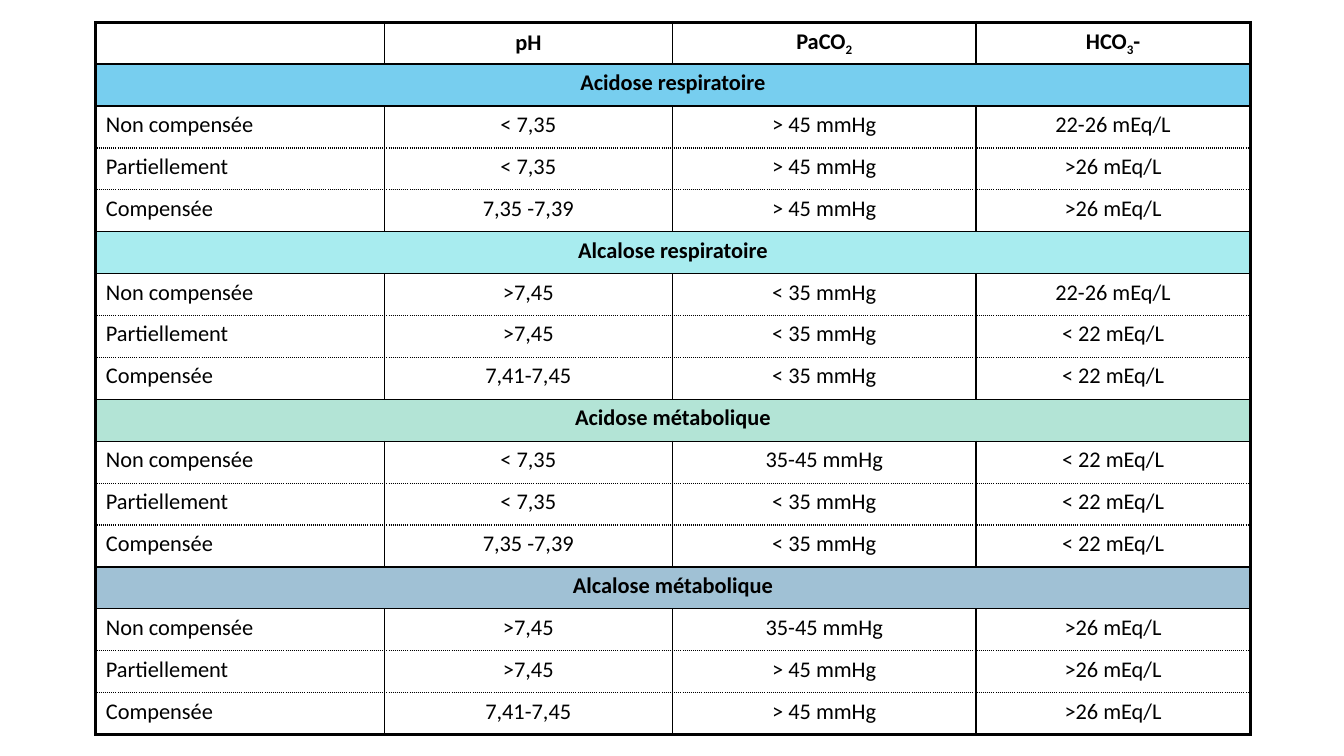
from dataclasses import dataclass
from typing import Optional

from lxml.etree import SubElement
from pptx import Presentation
from pptx.dml.color import RGBColor
from pptx.enum.text import MSO_ANCHOR, PP_ALIGN
from pptx.oxml.ns import qn
from pptx.table import Table, _Cell
from pptx.util import Inches, Pt

INK = "000000"
THIN, THICK = 1, 2.25
COLUMN_WIDTHS = (2.86, 2.86, 3.01, 2.72)
STAGES = ("Non compensée", "Partiellement", "Compensée")


@dataclass(frozen=True)
class Part:
    """A piece of a heading, lowered when it is a subscript."""
    text: str
    subscript: bool = False


@dataclass(frozen=True)
class Disorder:
    """An acid-base disorder with its values at each stage."""
    name: str
    color: str
    ph: tuple[str, str, str]
    paco2: tuple[str, str, str]
    hco3: tuple[str, str, str]


@dataclass(frozen=True)
class Border:
    width: float = THIN
    dash: str = "solid"


HEADINGS = (
    (),
    (Part("pH"),),
    (Part("PaCO"), Part("2", True)),
    (Part("HCO"), Part("3", True), Part("-")),
)

DISORDERS = (
    Disorder("Acidose respiratoire", "77CEEF",
             ("< 7,35", "< 7,35", "7,35 -7,39"),
             ("> 45 mmHg", "> 45 mmHg", "> 45 mmHg"),
             ("22-26 mEq/L", ">26 mEq/L", ">26 mEq/L")),
    Disorder("Alcalose respiratoire", "A8ECEF",
             (">7,45", ">7,45", "7,41-7,45"),
             ("< 35 mmHg", "< 35 mmHg", "< 35 mmHg"),
             ("22-26 mEq/L", "< 22 mEq/L", "< 22 mEq/L")),
    Disorder("Acidose métabolique", "B3E4D6",
             ("< 7,35", "< 7,35", "7,35 -7,39"),
             ("35-45 mmHg", "< 35 mmHg", "< 35 mmHg"),
             ("< 22 mEq/L", "< 22 mEq/L", "< 22 mEq/L")),
    Disorder("Alcalose métabolique", "A0C1D5",
             (">7,45", ">7,45", "7,41-7,45"),
             ("35-45 mmHg", "> 45 mmHg", "> 45 mmHg"),
             (">26 mEq/L", ">26 mEq/L", ">26 mEq/L")),
)

BLOCK_ROWS = 1 + len(STAGES)
ROW_COUNT = 1 + BLOCK_ROWS * len(DISORDERS)


def rgb(color: str) -> RGBColor:
    return RGBColor.from_string(color)


def write(cell: _Cell, parts: tuple[Part, ...], bold: bool = False,
          align: PP_ALIGN = PP_ALIGN.CENTER) -> None:
    paragraph = cell.text_frame.paragraphs[0]
    paragraph.alignment = align
    spacing = SubElement(paragraph._p.get_or_add_pPr(), qn("a:spcBef"))
    SubElement(spacing, qn("a:spcPct"), val="20000")
    for part in parts:
        run = paragraph.add_run()
        run.text = part.text
        for attribute, value in {"name": "Calibri", "size": Pt(16), "bold": bold}.items():
            setattr(run.font, attribute, value)
        run.font.color.rgb = rgb(INK)
        if part.subscript:
            run._r.get_or_add_rPr().set("baseline", "-25000")


def finish(cell: _Cell, borders: dict[str, Border], color: Optional[str] = None) -> None:
    """Draw the borders, then the fill, in the order the schema asks for."""
    properties = cell._tc.get_or_add_tcPr()
    for side, border in borders.items():
        line = SubElement(properties, qn(f"a:ln{side}"), w=str(Pt(border.width)))
        fill = SubElement(line, qn("a:solidFill"))
        SubElement(fill, qn("a:srgbClr"), val=INK)
        SubElement(line, qn("a:prstDash"), val=border.dash)
    if color:
        cell.fill.solid()
        cell.fill.fore_color.rgb = rgb(color)
    else:
        cell.fill.background()


def row_edge(edge: int) -> Border:
    """Thick outside, solid around headings, dotted between stages."""
    if edge in (0, ROW_COUNT):
        return Border(THICK)
    return Border(dash="solid" if edge % BLOCK_ROWS in (1, 2) else "sysDot")


def column_edge(edge: int) -> Border:
    return Border(THICK if edge in (0, len(COLUMN_WIDTHS)) else THIN)


def borders_at(row: int, column: int, span: int = 1) -> dict[str, Border]:
    return {"L": column_edge(column), "R": column_edge(column + span),
            "T": row_edge(row), "B": row_edge(row + 1)}


def fill_headings(table: Table) -> None:
    for column, parts in enumerate(HEADINGS):
        cell = table.cell(0, column)
        write(cell, parts, bold=True)
        cell.vertical_anchor = MSO_ANCHOR.MIDDLE
        finish(cell, borders_at(0, column))


def fill_disorder(table: Table, top: int, disorder: Disorder) -> None:
    # Coloured band across all columns
    span = len(COLUMN_WIDTHS)
    band = table.cell(top, 0)
    band.merge(table.cell(top, span - 1))
    write(band, (Part(disorder.name),), bold=True)
    finish(band, borders_at(top, 0, span), disorder.color)

    # One row per stage of compensation
    stage_rows = zip(STAGES, disorder.ph, disorder.paco2, disorder.hco3)
    for row, values in enumerate(stage_rows, start=top + 1):
        for column, value in enumerate(values):
            cell = table.cell(row, column)
            align = PP_ALIGN.CENTER if column else PP_ALIGN.LEFT
            write(cell, (Part(value),), align=align)
            finish(cell, borders_at(row, column))


def main() -> None:
    presentation = Presentation()
    presentation.slide_width = Inches(13.33)
    presentation.slide_height = Inches(7.5)
    slide = presentation.slides.add_slide(presentation.slide_layouts[6])

    # Table frame, with rows of equal height
    table = slide.shapes.add_table(
        ROW_COUNT, len(COLUMN_WIDTHS),
        Inches(0.95), Inches(0.22), Inches(sum(COLUMN_WIDTHS)), Inches(7.07)).table
    for option in ("first_row", "horz_banding"):
        setattr(table, option, False)
    for column, width in zip(table.columns, COLUMN_WIDTHS):
        column.width = Inches(width)

    # Contents
    fill_headings(table)
    for index, disorder in enumerate(DISORDERS):
        fill_disorder(table, 1 + index * BLOCK_ROWS, disorder)

    presentation.save("out.pptx")


if __name__ == "__main__":
    main()
